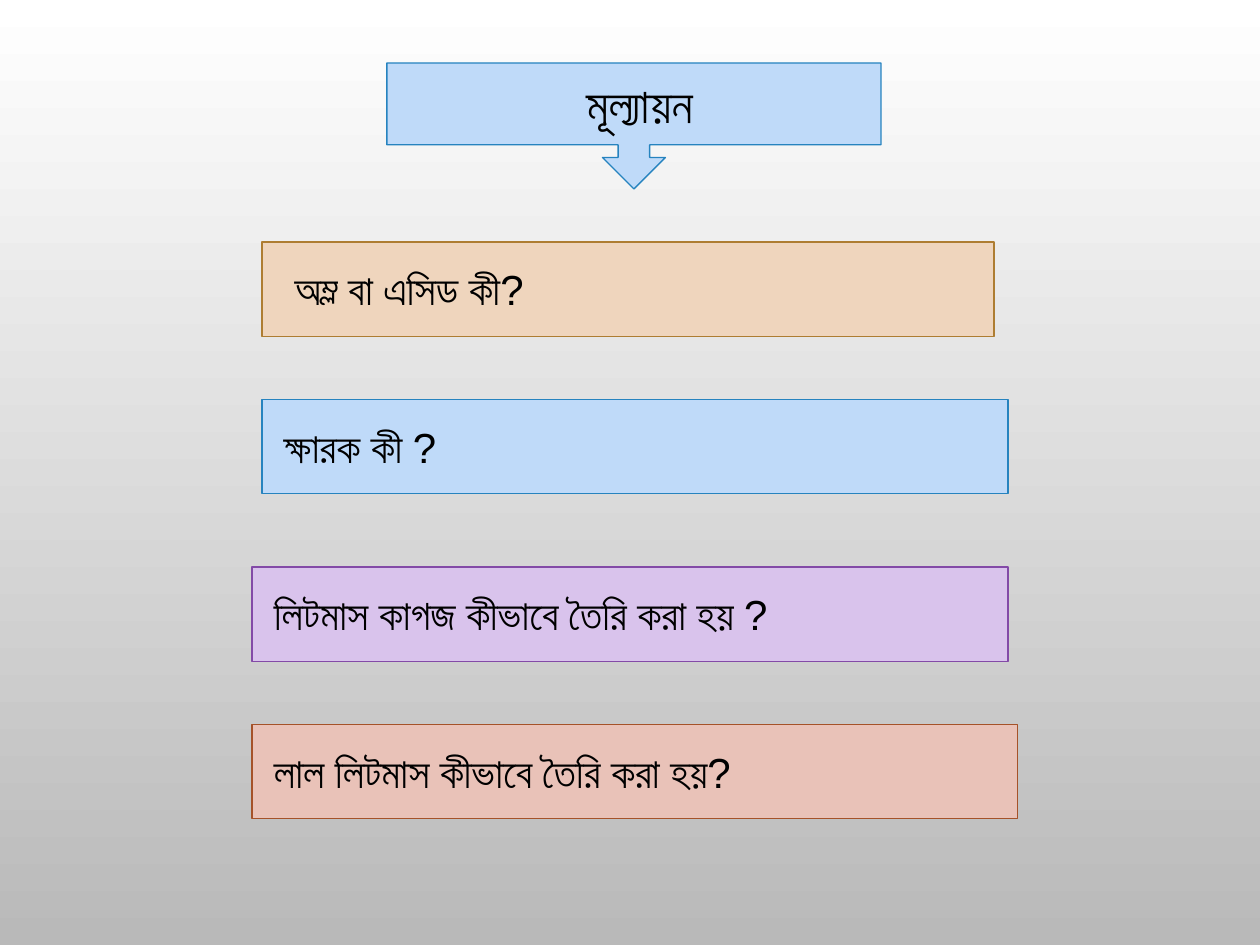
import dataclasses

import pptx
import pptx.dml.color
import pptx.enum.shapes
import pptx.enum.text
import pptx.util

Cm = pptx.util.Cm
Pt = pptx.util.Pt
Shapes = pptx.enum.shapes.MSO_SHAPE
Align = pptx.enum.text.PP_ALIGN


@dataclasses.dataclass(frozen=True)
class Theme:
    font: str = "Arial"
    title_size: int = 28
    question_size: int = 24
    line_width: float = 0.75
    text: str = "000000"
    background: tuple = ("FFFFFF", "B9B9B9")
    blue: tuple = ("BFDAF9", "2683BF")
    tan: tuple = ("EFD5BD", "AE7D32")
    purple: tuple = ("D9C3EC", "834AA7")
    red: tuple = ("E9C2B8", "A55229")


THEME = Theme()
BOX_HEIGHT = 1.9
QUESTIONS = (
    ("অম্ল বা এসিড কী?", 5.28, 4.88, 14.76, 0.66, THEME.tan),
    ("ক্ষারক কী ?", 5.28, 8.05, 15.04, 0.44, THEME.blue),
    ("লিটমাস কাগজ কীভাবে তৈরি করা হয় ?", 5.08, 11.43, 15.24, 0.44, THEME.purple),
    ("লাল লিটমাস কীভাবে তৈরি করা হয়?", 5.08, 14.6, 15.44, 0.44, THEME.red),
)


def color(value):
    return pptx.dml.color.RGBColor.from_string(value)


def paint_background(slide):
    fill = slide.background.fill
    fill.gradient()
    fill.gradient_angle = 270
    for stop, value in zip(fill.gradient_stops, THEME.background):
        stop.color.rgb = color(value)


def add_box(slide, kind, left, top, width, height, colors):
    shape = slide.shapes.add_shape(kind, Cm(left), Cm(top), Cm(width), Cm(height))
    fill, line = colors
    shape.shadow.inherit = False
    shape.fill.solid()
    shape.fill.fore_color.rgb = color(fill)
    shape.line.color.rgb = color(line)
    shape.line.width = Pt(THEME.line_width)
    return shape


def write_text(shape, text, size, alignment, indent):
    frame = shape.text_frame
    frame.word_wrap = True
    frame.auto_size = pptx.enum.text.MSO_AUTO_SIZE.NONE
    frame.vertical_anchor = pptx.enum.text.MSO_ANCHOR.MIDDLE
    frame.margin_left = Cm(indent)
    frame.text = text
    paragraph = frame.paragraphs[0]
    paragraph.alignment = alignment
    paragraph.font.name = THEME.font
    paragraph.font.size = Pt(size)
    paragraph.font.color.rgb = color(THEME.text)


def add_heading(slide, text):
    left, top, width = 7.8, 1.27, 9.96
    add_box(slide, Shapes.DOWN_ARROW_CALLOUT, left, top, width, 2.54, THEME.blue)
    title = slide.shapes.title
    title.left, title.top = Cm(left), Cm(top)
    title.width, title.height = Cm(width), Cm(1.65)
    write_text(title, text, THEME.title_size, Align.CENTER, 0.5)
    slide.shapes._spTree.append(title._element)


def add_question(slide, text, left, top, width, indent, colors):
    box = add_box(slide, Shapes.RECTANGLE, left, top, width, BOX_HEIGHT, colors)
    write_text(box, text, THEME.question_size, Align.LEFT, indent)


def main():
    presentation = pptx.Presentation()
    presentation.slide_width = Cm(25.4)
    presentation.slide_height = Cm(19.05)
    slide = presentation.slides.add_slide(presentation.slide_layouts[5])
    paint_background(slide)
    add_heading(slide, "মূল্যায়ন")
    for question in QUESTIONS:
        add_question(slide, *question)
    presentation.save("out.pptx")


if __name__ == "__main__":
    main()
